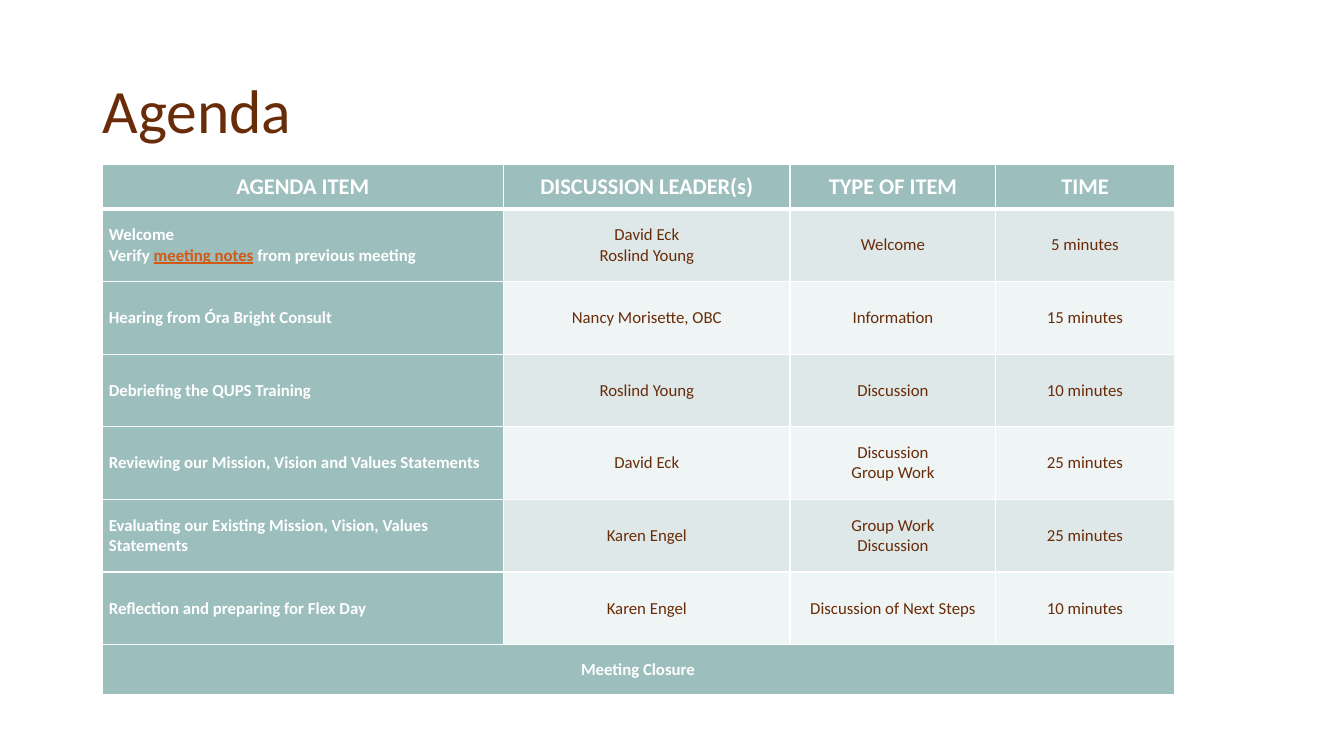
from lxml.etree import SubElement
from pptx import Presentation
from pptx.dml.color import RGBColor
from pptx.enum.text import MSO_ANCHOR, PP_ALIGN
from pptx.oxml.ns import qn
from pptx.util import Pt

FONT = "Calibri"
COLORS = {"brown": "692C09", "white": "FFFFFF", "teal": "9CBEBD",
          "mist": "DEE8E8", "pale": "EFF4F4", "link": "D25814"}
TITLE = "Agenda"
HEADS = ["AGENDA ITEM", "DISCUSSION LEADER(s)", "TYPE OF ITEM", "TIME"]
LINK = "meeting notes"
# Each cell is a list of lines; a line is a list of runs.
WELCOME = [["Welcome"], ["Verify ", LINK, " from previous meeting"]]
ITEMS = [
    (WELCOME, [["David Eck"], ["Roslind Young"]], [["Welcome"]], [["5 minutes"]]),
    ([["Hearing from Óra Bright Consult"]], [["Nancy Morisette, OBC"]],
     [["Information"]], [["15 minutes"]]),
    ([["Debriefing the QUPS Training"]], [["Roslind Young"]],
     [["Discussion"]], [["10 minutes"]]),
    ([["Reviewing our Mission, Vision and Values Statements"]], [["David Eck"]],
     [["Discussion"], ["Group Work"]], [["25 minutes"]]),
    ([["Evaluating our Existing Mission, Vision, Values Statements"]],
     [["Karen Engel"]], [["Group Work"], ["Discussion"]], [["25 minutes"]]),
    ([["Reflection and preparing for Flex Day"]], [["Karen Engel"]],
     [["Discussion of Next Steps"]], [["10 minutes"]]),
]
CLOSE = "Meeting Closure"

LEFT, TOP = 72.8, 117.7
WIDTHS = [287, 204.6, 147, 127.4]
HEIGHTS = [31.5] + [51.9] * len(ITEMS) + [35.4]


def color(name):
    return RGBColor.from_string(COLORS[name])


def write(par, text, size, tint, bold=False):
    run = par.add_run()
    run.text = text
    font = run.font
    font.name, font.size, font.bold = FONT, Pt(size), bold
    font.color.rgb = color(tint)
    return run


def edge(cell, top, bottom):
    """Draw white borders; they must come before the cell's fill."""
    props = cell._tc.get_or_add_tcPr()
    sides = [("lnL", 1), ("lnR", 1), ("lnT", top), ("lnB", bottom)]
    for spot, (tag, width) in enumerate(sides):
        line = SubElement(props, qn("a:" + tag), w=str(Pt(width)))
        fill = SubElement(line, qn("a:solidFill"))
        SubElement(fill, qn("a:srgbClr"), val=COLORS["white"])
        props.insert(spot, line)


def fill_cell(cell, lines, back, tint, size=12, bold=False, align=PP_ALIGN.CENTER):
    cell.fill.solid()
    cell.fill.fore_color.rgb = color(back)
    cell.vertical_anchor = MSO_ANCHOR.MIDDLE
    cell.margin_left = cell.margin_right = Pt(5)
    cell.margin_top = cell.margin_bottom = 0
    frame = cell.text_frame
    for num, runs in enumerate(lines):
        par = frame.add_paragraph() if num else frame.paragraphs[0]
        par.alignment = align
        for text in runs:
            linked = text == LINK
            run = write(par, text, size, "link" if linked else tint, bold)
            if linked:
                run.font.underline = True


def add_title(slide):
    title = slide.shapes.title
    title.left, title.top = Pt(66), Pt(28.8)
    title.width, title.height = Pt(828), Pt(104.4)
    title.text_frame.vertical_anchor = MSO_ANCHOR.MIDDLE
    par = title.text_frame.paragraphs[0]
    par.alignment = PP_ALIGN.LEFT
    par.line_spacing = 0.9
    write(par, TITLE, 44, "brown")


def add_agenda(slide):
    last = len(HEIGHTS) - 1
    table = slide.shapes.add_table(
        len(HEIGHTS), len(WIDTHS), Pt(LEFT), Pt(TOP),
        Pt(sum(WIDTHS)), Pt(sum(HEIGHTS))).table
    for col, width in zip(table.columns, WIDTHS):
        col.width = Pt(width)
    for row, height in zip(table.rows, HEIGHTS):
        row.height = Pt(height)

    for col, head in enumerate(HEADS):
        fill_cell(table.cell(0, col), [[head]], "teal", "white", 16, True)
    for row, item in enumerate(ITEMS, 1):
        fill_cell(table.cell(row, 0), item[0], "teal", "white",
                  bold=True, align=PP_ALIGN.LEFT)
        for col, lines in enumerate(item[1:], 1):
            fill_cell(table.cell(row, col), lines,
                      "mist" if row % 2 else "pale", "brown")
    end = table.cell(last, 0)
    end.merge(table.cell(last, len(WIDTHS) - 1))
    fill_cell(end, [[CLOSE]], "teal", "white", bold=True)

    for row in range(len(HEIGHTS)):
        for col in range(len(WIDTHS)):
            edge(table.cell(row, col), 3 if row == 1 else 1, 3 if row == 0 else 1)


def main():
    deck = Presentation()
    deck.slide_width, deck.slide_height = Pt(960), Pt(540)
    slide = deck.slides.add_slide(deck.slide_layouts[5])
    add_title(slide)
    add_agenda(slide)
    deck.save("out.pptx")


if __name__ == "__main__":
    main()
